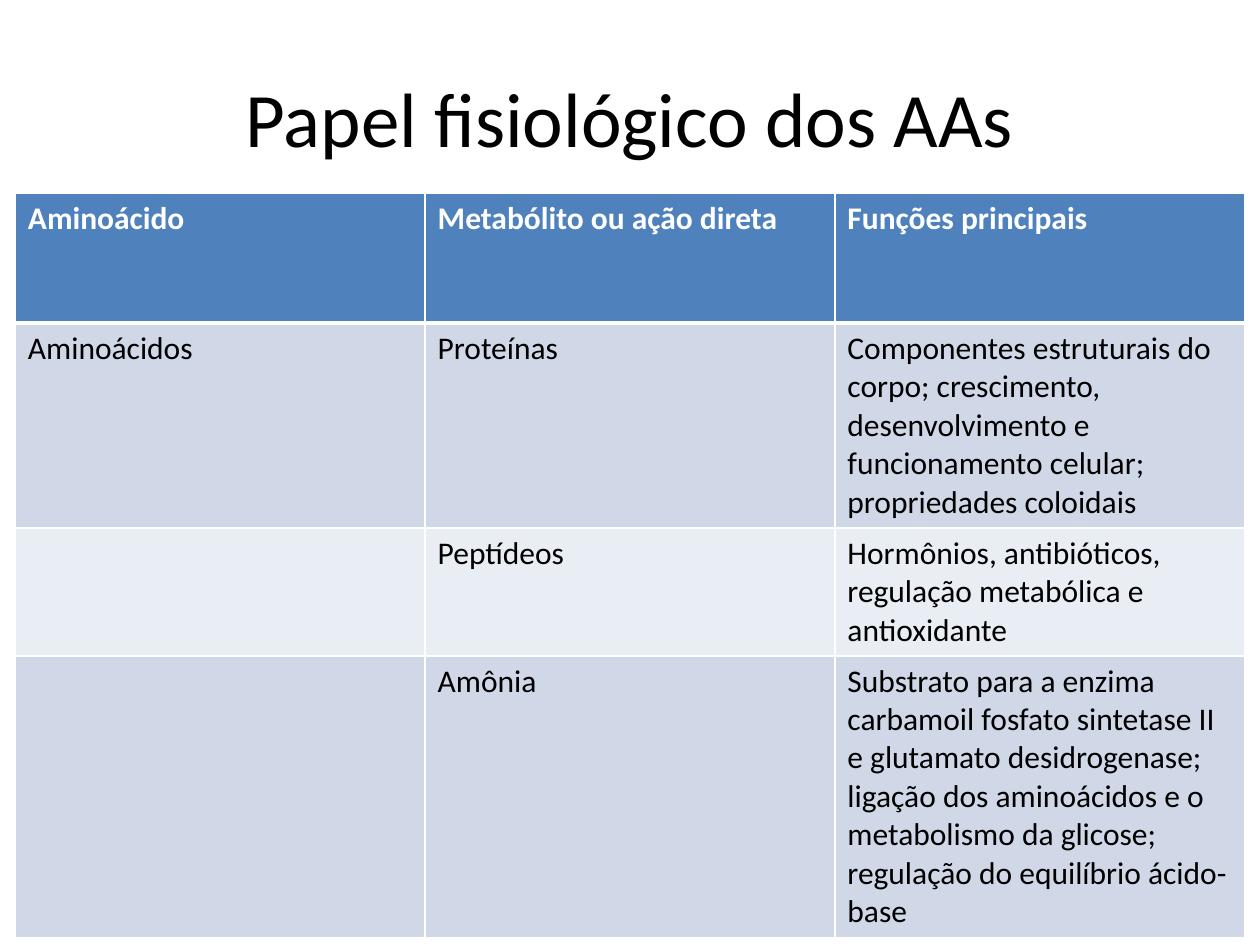
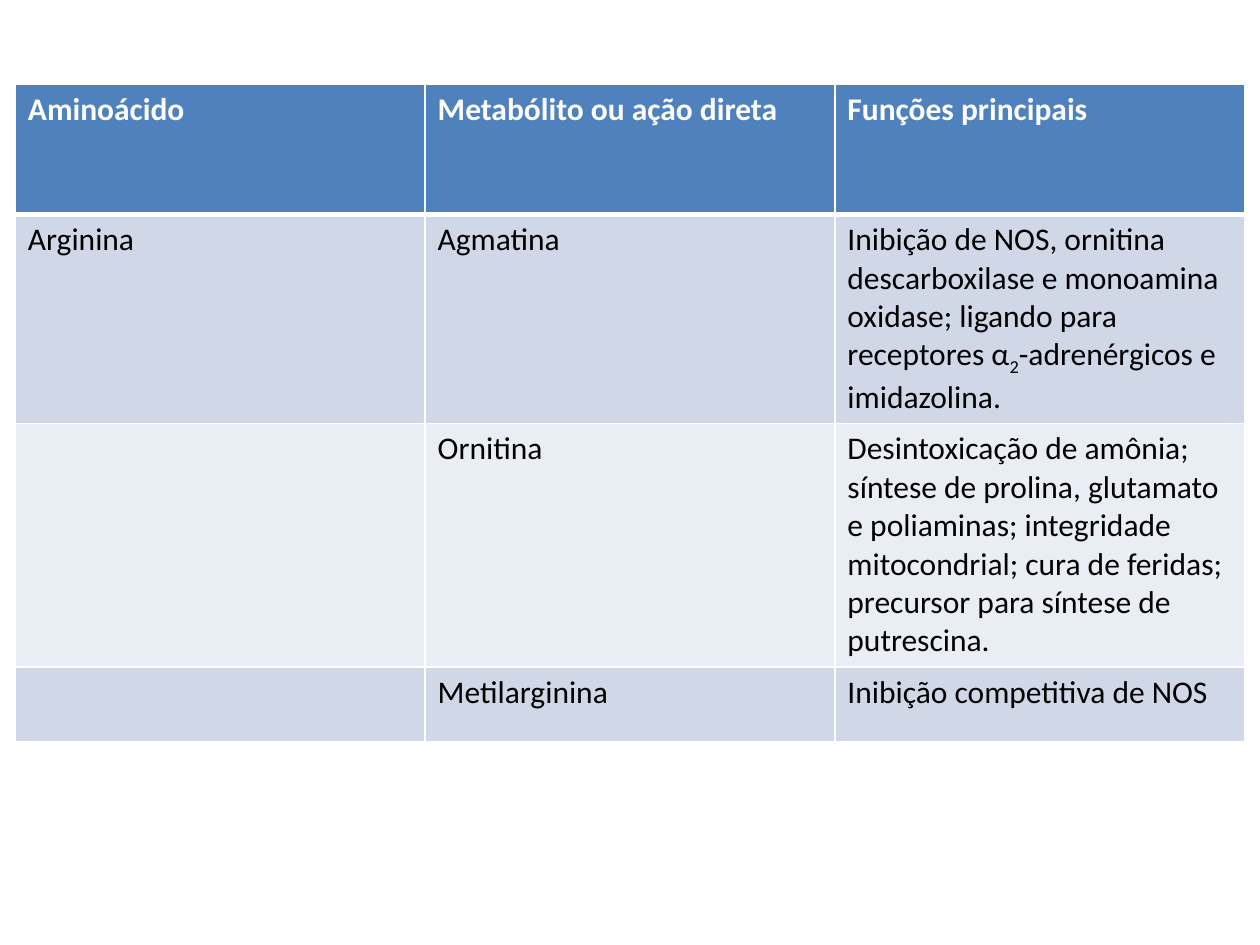
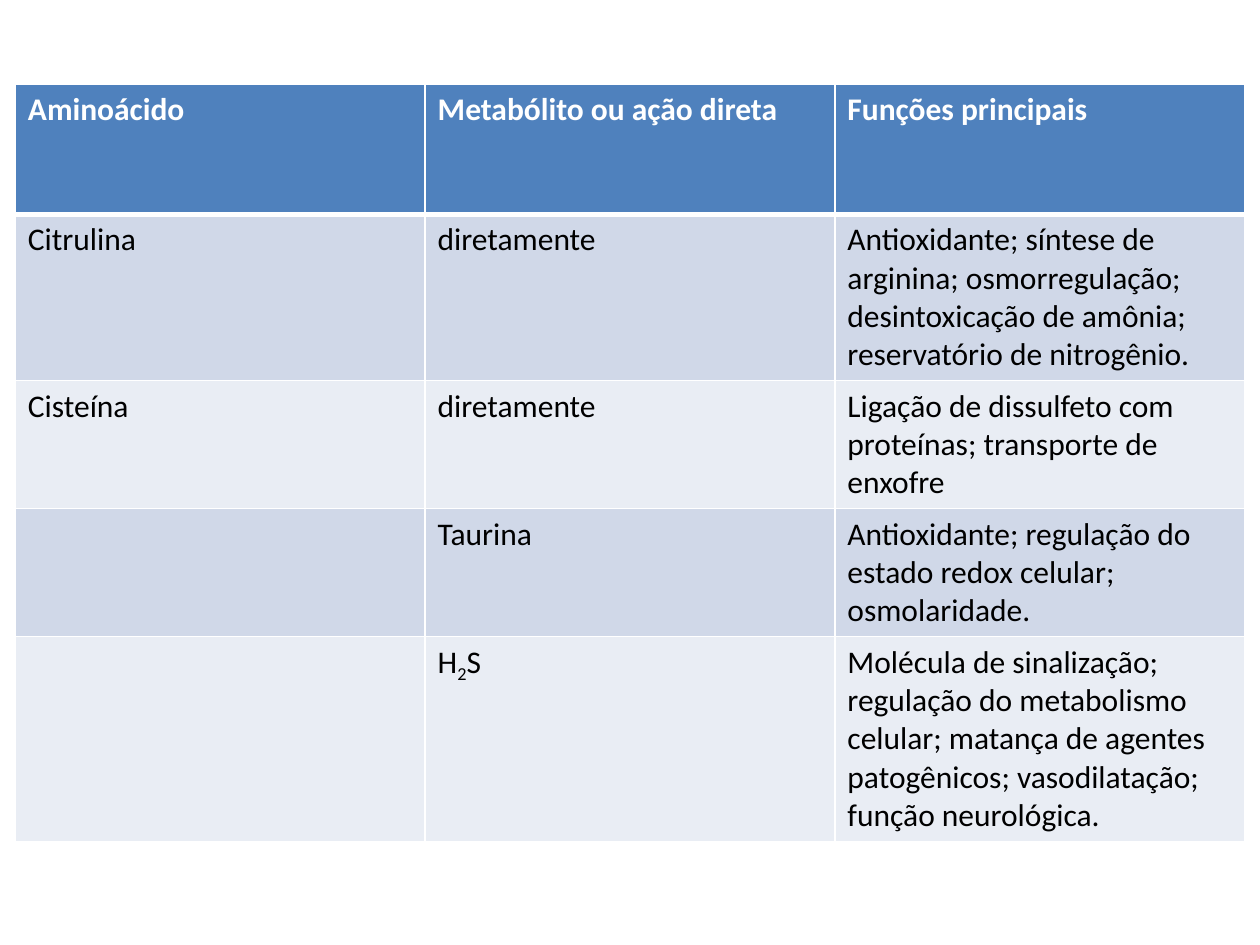
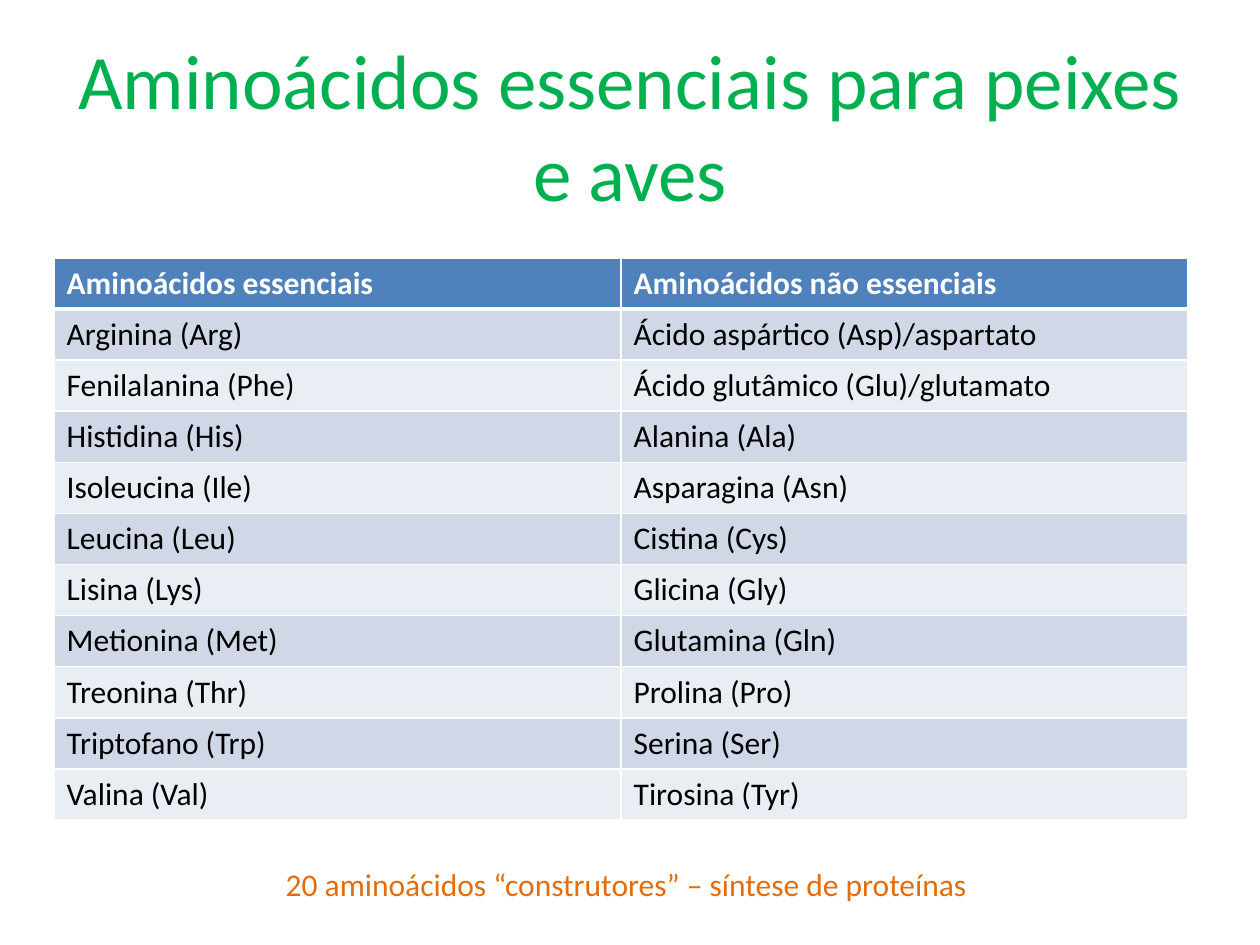
from lxml import etree
from pptx import Presentation
from pptx.dml.color import RGBColor
from pptx.enum.text import MSO_ANCHOR, PP_ALIGN
from pptx.oxml.ns import qn
from pptx.util import Cm, Pt

MID, TOP = MSO_ANCHOR.MIDDLE, MSO_ANCHOR.TOP
LEFT, CENTER = PP_ALIGN.LEFT, PP_ALIGN.CENTER
TITLE_ONLY, BLANK = 5, 6

FONT = "Calibri"
BLACK, WHITE, GREEN, ORANGE = "000000", "FFFFFF", "00B050", "E46C0A"
HEAD, BANDS = "4F81BD", ("D0D8E8", "E9EDF4")
SUB = "~"  # text between two of these marks is set as subscript

ROLES = ("Aminoácido", "Metabólito ou ação direta", "Funções principais")
ROLE_SIZE = dict(wide=8.26, head=2.62, high=1.52)
PAIR_SIZE = dict(wide=11.43, head=1.03, high=1.03)

# Title: text, colour, place (left, top, width, height in cm), anchor
# Table: left, top in cm, sizes, header and rows
SLIDES = [
    dict(
        title=("Papel fisiológico dos AAs", BLACK, (1.27, 0.76, 22.86, 3.18), MID),
        at=(0.31, 3.89), size=ROLE_SIZE, head=ROLES,
        rows=[
            ("Aminoácidos", "Proteínas",
             "Componentes estruturais do corpo; crescimento, desenvolvimento e "
             "funcionamento celular; propriedades coloidais"),
            ("", "Peptídeos",
             "Hormônios, antibióticos, regulação metabólica e antioxidante"),
            ("", "Amônia",
             "Substrato para a enzima carbamoil fosfato sintetase II e glutamato "
             "desidrogenase; ligação dos aminoácidos e o metabolismo da glicose; "
             "regulação do equilíbrio ácido-base"),
        ]),
    dict(
        at=(0.31, 1.7), size=ROLE_SIZE, head=ROLES,
        rows=[
            ("Arginina", "Agmatina",
             "Inibição de NOS, ornitina descarboxilase e monoamina oxidase; "
             "ligando para receptores α~2~-adrenérgicos e imidazolina."),
            ("", "Ornitina",
             "Desintoxicação de amônia; síntese de prolina, glutamato e poliaminas; "
             "integridade mitocondrial; cura de feridas; precursor para síntese de "
             "putrescina."),
            ("", "Metilarginina", "Inibição competitiva de NOS"),
        ]),
    dict(
        at=(0.31, 1.7), size=ROLE_SIZE, head=ROLES,
        rows=[
            ("Citrulina", "diretamente",
             "Antioxidante; síntese de arginina; osmorregulação; desintoxicação de "
             "amônia; reservatório de nitrogênio."),
            ("Cisteína", "diretamente",
             "Ligação de dissulfeto com proteínas; transporte de enxofre"),
            ("", "Taurina",
             "Antioxidante; regulação do estado redox celular; osmolaridade."),
            ("", "H~2~S",
             "Molécula de sinalização; regulação do metabolismo celular; matança de "
             "agentes patogênicos; vasodilatação; função neurológica."),
        ]),
    dict(
        title=("Aminoácidos essenciais para peixes e aves", GREEN,
               (1.3, 0.53, 22.81, 4.01), TOP),
        at=(1.09, 5.2), size=PAIR_SIZE,
        head=("Aminoácidos essenciais", "Aminoácidos não essenciais"),
        rows=[
            ("Arginina (Arg)", "Ácido aspártico (Asp)/aspartato"),
            ("Fenilalanina (Phe)", "Ácido glutâmico (Glu)/glutamato"),
            ("Histidina (His)", "Alanina (Ala)"),
            ("Isoleucina (Ile)", "Asparagina (Asn)"),
            ("Leucina (Leu)", "Cistina (Cys)"),
            ("Lisina (Lys)", "Glicina (Gly)"),
            ("Metionina (Met)", "Glutamina (Gln)"),
            ("Treonina (Thr)", "Prolina (Pro)"),
            ("Triptofano (Trp)", "Serina (Ser)"),
            ("Valina (Val)", "Tirosina (Tyr)"),
        ],
        note=("20 aminoácidos “construtores” – síntese de proteínas", ORANGE,
              (5.51, 17.32, 14.4, 1.02))),
]


def paint(fmt, color):
    fmt.rgb = RGBColor.from_string(color)


def write(frame, text, color, size=18, bold=False, align=LEFT):
    para = frame.paragraphs[0]
    para.alignment = align
    para.font.size = Pt(size)
    for i, part in enumerate(text.split(SUB)):
        if not part:
            continue
        run = para.add_run()
        run.text = part
        font = run.font
        font.name, font.size, font.bold = FONT, Pt(size), bold
        paint(font.color, color)
        if i % 2:
            run._r.get_or_add_rPr().set("baseline", "-25000")


def edge(cell, widths):
    """Draw white borders; widths maps L, R, T, B to points."""
    props = cell._tc.get_or_add_tcPr()
    for side, width in widths.items():
        line = etree.SubElement(props, qn("a:ln" + side), w=str(Pt(width)))
        fill = etree.SubElement(line, qn("a:solidFill"))
        etree.SubElement(fill, qn("a:srgbClr"), val=WHITE)


def add_title(slide, text, color, place, anchor):
    title = slide.shapes.title
    title.left, title.top, title.width, title.height = map(Cm, place)
    frame = title.text_frame
    frame.word_wrap = True
    frame.vertical_anchor = anchor
    write(frame, text, color, 44, align=CENTER)


def add_grid(slide, at, size, head, rows):
    lines = [head, *rows]
    wide, high = size["wide"] * len(head), size["head"] + size["high"] * len(rows)
    table = slide.shapes.add_table(
        len(lines), len(head), *map(Cm, (*at, wide, high))).table
    for col in table.columns:
        col.width = Cm(size["wide"])
    for r, line in enumerate(lines):
        top = r == 0
        table.rows[r].height = Cm(size["head" if top else "high"])
        for c, text in enumerate(line):
            cell = table.cell(r, c)
            edge(cell, dict(L=1, R=1, T=3 if r == 1 else 1, B=3 if top else 1))
            cell.fill.solid()
            paint(cell.fill.fore_color, HEAD if top else BANDS[(r - 1) % 2])
            write(cell.text_frame, text, WHITE if top else BLACK, bold=top)


def add_note(slide, text, color, place):
    frame = slide.shapes.add_textbox(*map(Cm, place)).text_frame
    frame.word_wrap = True
    write(frame, text, color)


def main():
    deck = Presentation()
    deck.slide_width, deck.slide_height = Cm(25.4), Cm(19.05)
    for page in SLIDES:
        layout = TITLE_ONLY if "title" in page else BLANK
        slide = deck.slides.add_slide(deck.slide_layouts[layout])
        if "title" in page:
            add_title(slide, *page["title"])
        add_grid(slide, page["at"], page["size"], page["head"], page["rows"])
        if "note" in page:
            add_note(slide, *page["note"])
    deck.save("out.pptx")


if __name__ == "__main__":
    main()
